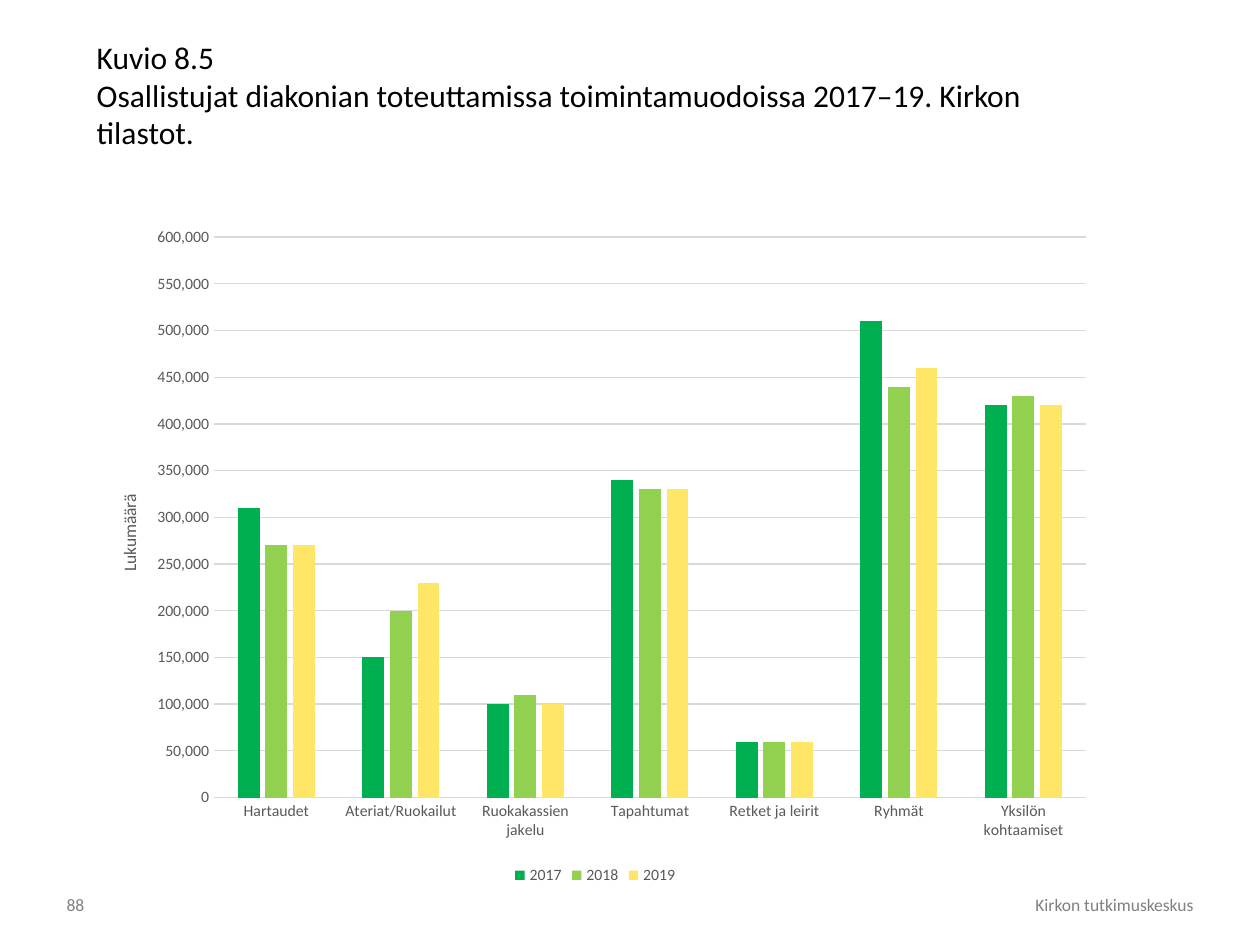
from lxml import etree
from pptx import Presentation
from pptx.chart.data import CategoryChartData
from pptx.dml.color import RGBColor
from pptx.enum.chart import XL_CHART_TYPE, XL_LEGEND_POSITION, XL_TICK_MARK
from pptx.enum.text import MSO_ANCHOR, PP_ALIGN
from pptx.oxml.ns import qn
from pptx.util import Pt

COLUMNS = XL_CHART_TYPE.COLUMN_CLUSTERED
LEGEND_BOTTOM = XL_LEGEND_POSITION.BOTTOM
NO_TICKS = XL_TICK_MARK.NONE
LEFT, RIGHT = PP_ALIGN.LEFT, PP_ALIGN.RIGHT
TOP, MIDDLE = MSO_ANCHOR.TOP, MSO_ANCHOR.MIDDLE

FONT = "Calibri"
BLACK, GREY, LABEL_GREY, GRID_GREY = "000000", "808080", "595959", "D9D9D9"

CATEGORIES = ["Hartaudet", "Ateriat/Ruokailut", "Ruokakassien jakelu",
              "Tapahtumat", "Retket ja leirit", "Ryhmät", "Yksilön kohtaamiset"]
# Year, bar colour, participants in each category
SERIES = [
    ("2017", "00B050", [310000, 150000, 100000, 340000, 60000, 510000, 420000]),
    ("2018", "92D050", [270000, 200000, 110000, 330000, 60000, 440000, 430000]),
    ("2019", "FFE666", [270000, 230000, 100000, 330000, 60000, 460000, 420000]),
]


def color(hex_string):
    return RGBColor.from_string(hex_string)


def style_font(font, size, hex_color):
    font.name = FONT
    font.size = Pt(size)
    font.bold = False
    font.color.rgb = color(hex_color)


def add_text(slide, box, text, size=10, hex_color=GREY, align=LEFT, anchor=MIDDLE):
    frame = slide.shapes.add_textbox(*map(Pt, box)).text_frame
    frame.word_wrap = True
    frame.vertical_anchor = anchor
    frame.text = text
    for paragraph in frame.paragraphs:
        paragraph.alignment = align
        style_font(paragraph.runs[0].font, size, hex_color)


def set_layout(parent, before, **values):
    """Place a chart part by fractions of the chart area."""
    for old in parent.findall(qn("c:layout")):
        parent.remove(old)
    layout = etree.Element(qn("c:layout"))
    manual = etree.SubElement(layout, qn("c:manualLayout"))
    for name, value in values.items():
        etree.SubElement(manual, qn(f"c:{name}")).set("val", str(value))
    previous = parent.find(qn(before)) if before else None
    parent.insert(0 if previous is None else parent.index(previous) + 1, layout)


def style_axes(chart):
    category_axis, value_axis = chart.category_axis, chart.value_axis
    for axis in (category_axis, value_axis):
        axis.major_tick_mark = axis.minor_tick_mark = NO_TICKS
        style_font(axis.tick_labels.font, 9, LABEL_GREY)
    value_axis.minimum_scale = 0
    value_axis.maximum_scale = 600000
    value_axis.major_unit = 50000
    value_axis.tick_labels.number_format = "#,##0"
    value_axis.tick_labels.number_format_is_linked = False
    value_axis.format.line.fill.background()
    for line in (category_axis.format.line, value_axis.major_gridlines.format.line):
        line.color.rgb = color(GRID_GREY)
        line.width = Pt(0.75)

    # Value axis title
    title = value_axis.axis_title
    title.text_frame.text = "Lukumäärä"
    style_font(title.text_frame.paragraphs[0].runs[0].font, 10, LABEL_GREY)
    body = title.text_frame._txBody.find(qn("a:bodyPr"))
    body.set("rot", "-5400000")
    body.set("vert", "horz")
    set_layout(title._element, "c:tx", xMode="edge", yMode="edge", x=0.03, y=0.41)


def add_participant_chart(slide, box):
    data = CategoryChartData(number_format="#,##0")
    data.categories = CATEGORIES
    for year, _, values in SERIES:
        data.add_series(year, values)
    chart = slide.shapes.add_chart(COLUMNS, *map(Pt, box), data).chart
    style_font(chart.font, 10, BLACK)
    chart.has_title = False

    # Columns
    plot = chart.plots[0]
    plot.gap_width = 219
    plot.overlap = -27
    plot.vary_by_categories = False
    for series, (_, hex_color, _) in zip(plot.series, SERIES):
        series.format.fill.solid()
        series.format.fill.fore_color.rgb = color(hex_color)

    style_axes(chart)
    plot_area = chart._chartSpace.chart.plotArea
    set_layout(plot_area, None, layoutTarget="inner", xMode="edge", yMode="edge",
               x=0.127, y=0.034, w=0.853, h=0.83)

    # Legend
    chart.has_legend = True
    chart.legend.position = LEGEND_BOTTOM
    chart.legend.include_in_layout = False
    style_font(chart.legend.font, 9, LABEL_GREY)


def add_footer(slide, top, height):
    add_text(slide, (212.4, top, 476.6, height), "Kirkon tutkimuskeskus", align=RIGHT)
    add_text(slide, (31, top, 33.8, height), "88")


def main():
    presentation = Presentation()
    presentation.slide_width, presentation.slide_height = Pt(720), Pt(540)
    slide = presentation.slides.add_slide(presentation.slide_layouts[6])

    add_footer(slide, 508.3, 17.3)
    add_text(slide, (48.2, 18, 589.7, 72.7),
             "Kuvio 8.5\nOsallistujat diakonian toteuttamissa toimintamuodoissa "
             "2017–19. Kirkon tilastot.",
             size=18, hex_color=BLACK, anchor=TOP)
    add_participant_chart(slide, (48.2, 122.4, 583.9, 385.9))

    presentation.save("out.pptx")


if __name__ == "__main__":
    main()
